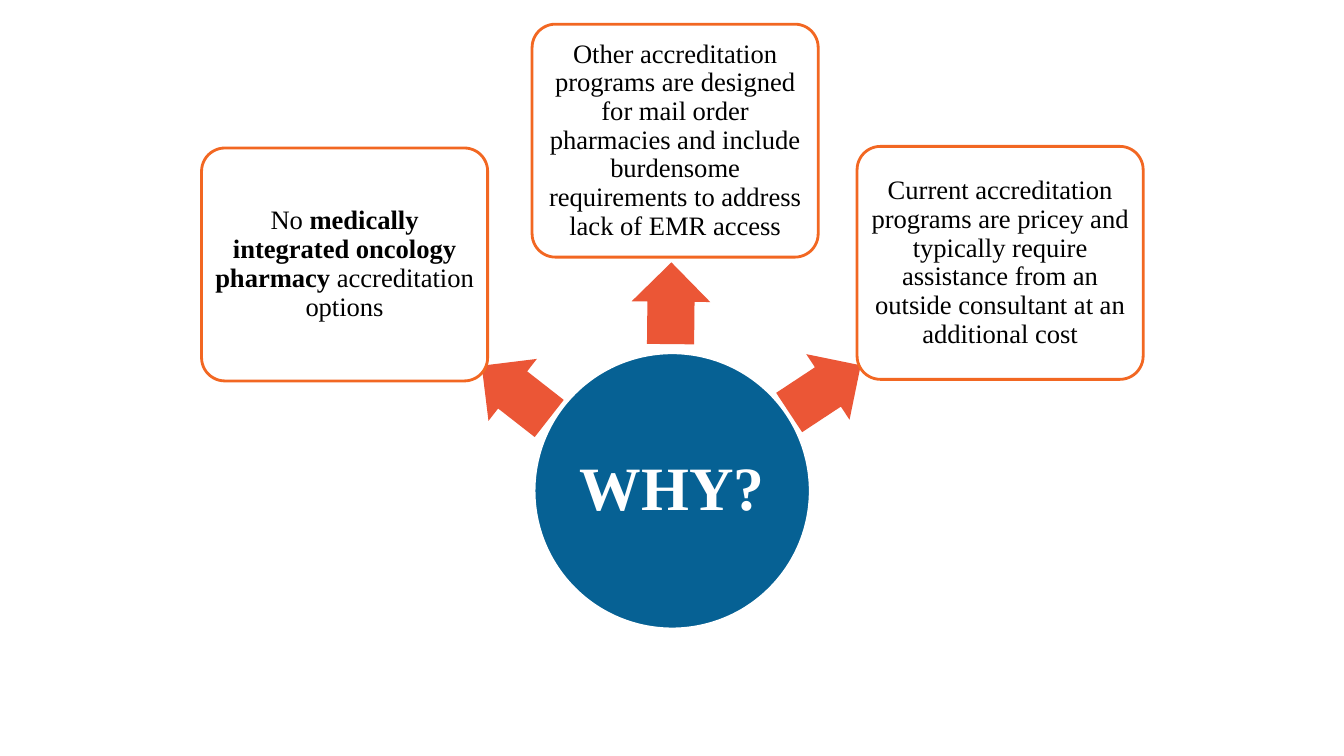
"""Build the WHY? slide: a hub circle with arrows to three reasons."""
from pptx import Presentation
from pptx.dml.color import RGBColor
from pptx.enum import shapes, text
from pptx.util import Cm, Pt

FONT = "Times New Roman"
BLUE, RED, ORANGE, WHITE, BLACK = "066194", "EB5636", "F26722", "FFFFFF", "000000"
KIND = shapes.MSO_SHAPE

HUB = (13.46, 8.89, 6.96, 6.96)
CARD = (7.21, 5.87)
REASONS = [
    {"card": (5.08, 3.73), "arrow": (11.91, 8.89, 2.16, 1.98), "turn": 218,
     "runs": [("No ", False), ("medically integrated oncology pharmacy ", True),
              ("accreditation options", False)]},
    {"card": (13.41, 0.61), "arrow": (15.88, 6.65, 2.06, 1.98), "turn": 270.6,
     "runs": [("Other accreditation programs are designed for mail order pharmacies "
               "and include burdensome requirements to address lack of EMR access", False)]},
    {"card": (21.6, 3.69), "arrow": (19.71, 8.81, 2.16, 1.98), "turn": 326.6,
     "runs": [("Current accreditation programs are pricey and typically require "
               "assistance from an outside consultant at an additional cost", False)]},
]


def tint(code):
    return RGBColor.from_string(code)


def draw(slide, kind, box, fill, line=None, adjust=()):
    shape = slide.shapes.add_shape(kind, *map(Cm, box))
    shape.shadow.inherit = False
    shape.fill.solid()
    shape.fill.fore_color.rgb = tint(fill)
    if line:
        shape.line.color.rgb = tint(line)
        shape.line.width = Pt(2)
    else:
        shape.line.fill.background()
    for i, value in enumerate(adjust):
        shape.adjustments[i] = value
    return shape


def write(shape, runs, size=19, color=BLACK, inset=0.1):
    frame = shape.text_frame
    frame.word_wrap = True
    frame.vertical_anchor = text.MSO_ANCHOR.MIDDLE
    frame.margin_left = frame.margin_right = Cm(inset)
    frame.margin_top = frame.margin_bottom = Cm(inset)
    para = frame.paragraphs[0]
    para.alignment = text.PP_ALIGN.CENTER
    para.line_spacing = 0.9
    for words, bold in runs:
        run = para.add_run()
        run.text = words
        run.font.name = FONT
        run.font.size = Pt(size)
        run.font.bold = bold
        run.font.color.rgb = tint(color)


def main():
    deck = Presentation()
    deck.slide_width, deck.slide_height = Cm(33.87), Cm(19.05)
    slide = deck.slides.add_slide(deck.slide_layouts[6])
    hub = draw(slide, KIND.OVAL, HUB, BLUE, WHITE)
    write(hub, [("WHY?", True)], size=44, color=WHITE, inset=0.08)
    for item in REASONS:
        arrow = draw(slide, KIND.RIGHT_ARROW, item["arrow"], RED, adjust=(0.6, 0.5))
        arrow.rotation = item["turn"]
        card = draw(slide, KIND.ROUNDED_RECTANGLE, item["card"] + CARD, WHITE, ORANGE, (0.1,))
        write(card, item["runs"])
    deck.save("out.pptx")


if __name__ == "__main__":
    main()
